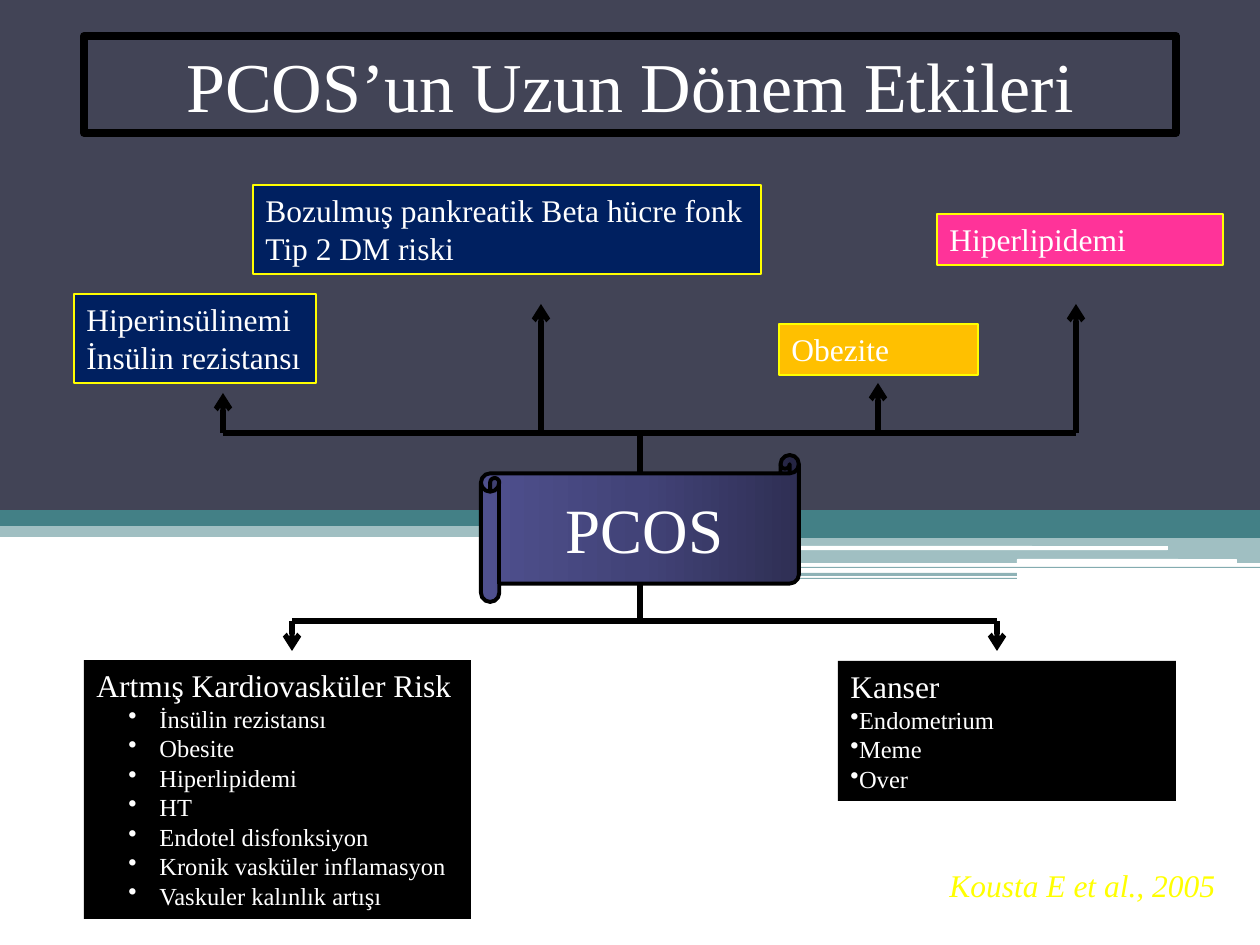
from copy import deepcopy

from lxml.etree import SubElement
from pptx import Presentation
from pptx.dml.color import RGBColor
from pptx.enum.shapes import MSO_CONNECTOR as Connector, MSO_SHAPE as Shape
from pptx.enum.text import MSO_ANCHOR as Anchor, MSO_AUTO_SIZE as AutoSize, PP_ALIGN as Align
from pptx.oxml.ns import qn
from pptx.util import Pt

EMU_PER_PX = 914400 / 126
FONT = "Times New Roman"
BLACK = RGBColor(0x00, 0x00, 0x00)
WHITE = RGBColor(0xFF, 0xFF, 0xFF)
YELLOW = RGBColor(0xFF, 0xFF, 0x00)
NAVY = RGBColor(0x00, 0x20, 0x60)
AMBER = RGBColor(0xFF, 0xC0, 0x00)
PINK = RGBColor(0xFF, 0x33, 0x99)
SLATE = RGBColor(0x42, 0x44, 0x56)
TEAL = RGBColor(0x43, 0x80, 0x86)
SCROLL_STOPS = (
    (0, RGBColor(0x2F, 0x2F, 0x54)),
    (0.5, RGBColor(0x42, 0x43, 0x78)),
    (1, RGBColor(0x4F, 0x50, 0x8E)),
)
BANDS = (
    (746, 525, 514, 13, TEAL, 100),
    (746, 537, 514, 26, TEAL, 50),
    (746, 567, 514, 1, TEAL, 65),
    (746, 573, 271, 3, TEAL, 60),
    (746, 578, 271, 1, TEAL, 65),
    (746, 546, 422, 4, WHITE, 100),
    (1017, 559, 220, 5, WHITE, 100),
    (0, 503, 1260, 34, TEAL, 50),
    (0, 507, 1260, 19, TEAL, 100),
    (883, 501, 377, 34, TEAL, 100),
    (0, 0, 1260, 510, SLATE, 100),
)
RISKS = ("İnsülin rezistansı", "Obesite", "Hiperlipidemi", "HT", "Endotel disfonksiyon",
         "Kronik vasküler inflamasyon", "Vaskuler kalınlık artışı")
CANCERS = ("Endometrium", "Meme", "Over")
CENTER_X, UPPER_Y, LOWER_Y = 640, 433, 621


def px(length):
    """Turn pixels into EMU."""
    return round(length * EMU_PER_PX)


def add_block(page, kind, area, fill=None, line=None, width=0.75):
    """Add a preset shape with a plain fill and outline."""
    block = page.shapes.add_shape(kind, *map(px, area))
    block.shadow.inherit = False
    if fill is None:
        block.fill.background()
    else:
        block.fill.solid()
        block.fill.fore_color.rgb = fill
    if line is None:
        block.line.fill.background()
    else:
        block.line.color.rgb = line
        block.line.width = Pt(width)
    return block


def add_band(page, left, top, width, height, color, opacity):
    """Add one background band of the given opacity percentage."""
    kind = Shape.ROUNDED_RECTANGLE if color == WHITE else Shape.RECTANGLE
    band = add_block(page, kind, (left, top, width, height), color)
    if opacity < 100:
        tint = band.fill._xPr.find(".//" + qn("a:srgbClr"))
        SubElement(tint, qn("a:alpha"), val=str(opacity * 1000))


def style_paragraph(para, size, color=WHITE, align=Align.LEFT, italic=False):
    """Format a paragraph and its spans."""
    para.alignment = align
    for span in para.runs:
        span.font.name = FONT
        span.font.size = Pt(size)
        span.font.color.rgb = color
        span.font.italic = italic


def set_text(box, lines, size=18, wrap=True, **style):
    """Write lines at the top of a box that grows with its text."""
    frame = box.text_frame
    frame.text = "\n".join(lines)
    frame.word_wrap = wrap
    frame.auto_size = AutoSize.SHAPE_TO_FIT_TEXT
    frame.vertical_anchor = Anchor.TOP
    for para in frame.paragraphs:
        style_paragraph(para, size, **style)


def add_bullet(para, margin, indent):
    """Give a paragraph a bullet and its indents."""
    props = para._p.get_or_add_pPr()
    props.set("marL", str(px(margin)))
    props.set("indent", str(px(indent)))
    SubElement(props, qn("a:buChar"), char="•")


def add_list(page, area, heading, items, wrap=True, margin=0, indent=0):
    """Add a black box with a heading and bulleted items."""
    box = add_block(page, Shape.RECTANGLE, area, BLACK)
    set_text(box, (heading, *items), wrap=wrap)
    for para in box.text_frame.paragraphs[1:]:
        style_paragraph(para, 14)
        add_bullet(para, margin, indent)


def add_effect(page, area, color, lines, wrap=True):
    """Add a yellow-edged effect box."""
    set_text(add_block(page, Shape.RECTANGLE, area, color, YELLOW), lines, wrap=wrap)


def add_scroll(page):
    """Add the central scroll with its gradient."""
    scroll = add_block(page, Shape.HORIZONTAL_SCROLL, (481, 455, 318, 147), None, BLACK, 2.25)
    scroll.fill.gradient()
    scroll.fill.gradient_angle = 180
    stop_list = scroll.fill._fill._gradFill.gsLst
    stop_list.append(deepcopy(stop_list[-1]))
    for stop, (position, color) in zip(scroll.fill.gradient_stops, SCROLL_STOPS):
        stop.position = position
        stop.color.rgb = color
    set_text(scroll, ["PCOS"], 36, wrap=False, align=Align.CENTER)
    scroll.text_frame.auto_size = AutoSize.NONE
    scroll.text_frame.vertical_anchor = Anchor.MIDDLE


def add_line(page, start, end, arrow=False):
    """Add a black line, optionally with an arrowhead at its end."""
    line = page.shapes.add_connector(Connector.STRAIGHT, *map(px, (*start, *end)))
    line.line.color.rgb = BLACK
    line.line.width = Pt(3)
    if arrow:
        SubElement(line.line._get_or_add_ln(), qn("a:tailEnd"), type="arrow")
    SubElement(line._element.spPr, qn("a:effectLst"))


def add_branches(page, stem_y, bar_y, tips):
    """Add a stem, a crossbar and one arrow for each tip."""
    add_line(page, (CENTER_X, stem_y), (CENTER_X, bar_y))
    add_line(page, (tips[0][0], bar_y), (tips[-1][0], bar_y))
    for x, y in tips:
        add_line(page, (x, bar_y), (x, y), arrow=True)


def main():
    """Build and save the slide."""
    deck = Presentation()
    deck.slide_width, deck.slide_height = px(1260), px(945)
    page = deck.slides.add_slide(deck.slide_layouts[6])
    for band in BANDS:
        add_band(page, *band)
    add_scroll(page)
    add_effect(page, (74, 294, 242, 89), NAVY, ("Hiperinsülinemi", "İnsülin rezistansı"), False)
    add_effect(page, (253, 185, 508, 89), NAVY,
               ("Bozulmuş pankreatik Beta hücre fonk", "Tip 2 DM riski"), False)
    add_effect(page, (779, 324, 199, 51), AMBER, ["Obezite"])
    add_effect(page, (937, 214, 286, 51), PINK, ["Hiperlipidemi"])
    title = add_block(page, Shape.RECTANGLE, (84, 36, 1092, 97), None, BLACK, 4.5)
    set_text(title, ["PCOS’un Uzun Dönem Etkileri"], 40, align=Align.CENTER)
    add_list(page, (84, 660, 387, 259), "Artmış Kardiovasküler Risk", RISKS, False, 63, -31)
    add_list(page, (838, 661, 338, 140), "Kanser", CANCERS)
    add_branches(page, 473, UPPER_Y, ((223, 393), (541, 304), (878, 383), (1076, 304)))
    add_branches(page, 583, LOWER_Y, ((292, 651), (997, 651)))
    source = page.shapes.add_textbox(*map(px, (937, 860, 294, 51)))
    set_text(source, ["Kousta E et al., 2005"], wrap=False, color=YELLOW, italic=True)
    deck.save("out.pptx")


if __name__ == "__main__":
    main()
